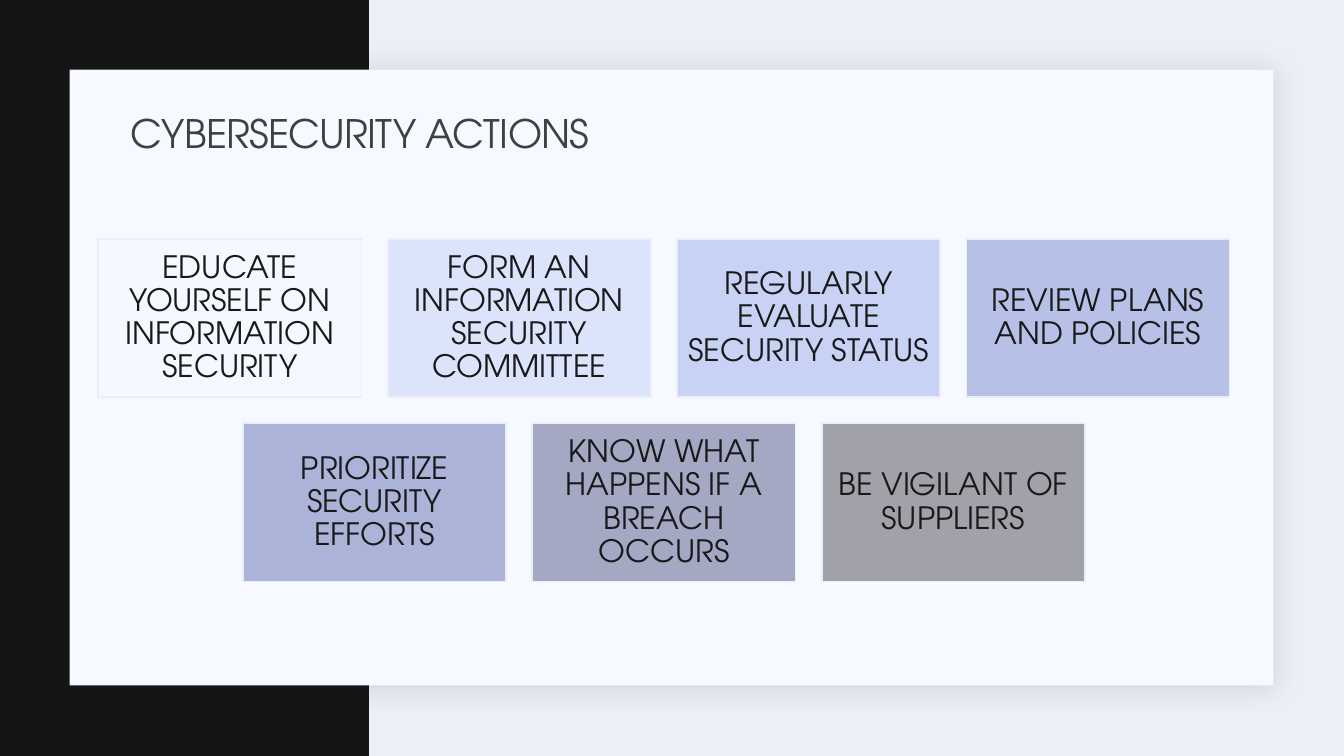
import pptx
import pptx.dml.color
import pptx.enum.shapes
import pptx.enum.text
import pptx.oxml
import pptx.oxml.ns
import pptx.util
from pptx.util import Inches

FONT = "TeX Gyre Adventor"
CARD_WIDTH, CARD_HEIGHT, CARD_GAP = 2.61, 1.57, 0.26
CARD_ROWS = [
    [
        ("EDUCATE YOURSELF ON INFORMATION SECURITY", "F5F8FF"),
        ("FORM AN INFORMATION SECURITY COMMITTEE", "DCE4FC"),
        ("REGULARLY EVALUATE SECURITY STATUS", "C7D2F4"),
        ("REVIEW PLANS AND POLICIES", "B7C1E8"),
    ],
    [
        ("PRIORITIZE SECURITY EFFORTS", "ABB3D8"),
        ("KNOW WHAT HAPPENS IF A BREACH OCCURS", "A4A8C3"),
        ("BE VIGILANT OF SUPPLIERS", "A1A2A9"),
    ],
]


def color(value):
    return pptx.dml.color.RGBColor.from_string(value)


def add_rectangle(page, box, fill, line=None):
    shape = page.shapes.add_shape(
        pptx.enum.shapes.MSO_SHAPE.RECTANGLE, *map(Inches, box))
    shape.shadow.inherit = False
    shape.fill.solid()
    shape.fill.fore_color.rgb = color(fill)
    if line:
        shape.line.color.rgb = color(line)
        shape.line.width = pptx.util.Pt(1.25)
    else:
        shape.line.fill.background()
    return shape


def add_soft_shadow(shape):
    effects = shape._element.spPr.find(pptx.oxml.ns.qn("a:effectLst"))
    effects.append(pptx.oxml.parse_xml(
        f'<a:outerShdw {pptx.oxml.ns.nsdecls("a")} blurRad="{pptx.util.Pt(20)}" '
        f'dist="{pptx.util.Pt(2)}" dir="{45 * 60000}" algn="tl" rotWithShape="0">'
        '<a:srgbClr val="1F2125"><a:alpha val="15000"/></a:srgbClr></a:outerShdw>'))


def set_text(shape, text, size, fill, align="LEFT", inset=0.1, tracking=0):
    """Write one vertically centred paragraph; tracking is in points."""
    frame = shape.text_frame
    frame.word_wrap = True
    frame.vertical_anchor = pptx.enum.text.MSO_ANCHOR.MIDDLE
    frame.margin_left = frame.margin_right = Inches(inset)
    frame.margin_top = frame.margin_bottom = Inches(min(inset, 0.09))
    para = frame.paragraphs[0]
    para.alignment = pptx.enum.text.PP_ALIGN[align]
    para.line_spacing = 0.9
    span = para.add_run()
    span.text = text
    span.font.name = FONT
    span.font.size = pptx.util.Pt(size)
    span.font.color.rgb = color(fill)
    if tracking:
        span._r.get_or_add_rPr().set("spc", str(round(tracking * 100)))


def add_backdrop(page, box):
    """Fill the page, with a dark band on its left and a raised panel."""
    left, top, width, height = box
    page.background.fill.solid()
    page.background.fill.fore_color.rgb = color("EDEFF7")
    add_rectangle(page, (left, top, 3.66, height), "141514")
    margin = 0.69
    panel = add_rectangle(
        page, (left + margin, top + margin, width - 1.39, height - 1.39), "F6F9FF")
    add_soft_shadow(panel)


def add_title(page, box):
    title = page.shapes.add_textbox(*map(Inches, box))
    set_text(title, "CYBERSECURITY ACTIONS", 28, "404040", tracking=-0.5)


def add_cards(page, box):
    """Stack the rows of cards, each row centred in the box."""
    left, top, width, _ = box
    for row_index, row in enumerate(CARD_ROWS):
        row_width = len(row) * (CARD_WIDTH + CARD_GAP) - CARD_GAP
        row_left = left + (width - row_width) / 2
        card_top = top + row_index * (CARD_HEIGHT + CARD_GAP)
        for index, (text, fill) in enumerate(row):
            card_left = row_left + index * (CARD_WIDTH + CARD_GAP)
            card = add_rectangle(
                page, (card_left, card_top, CARD_WIDTH, CARD_HEIGHT), fill, "ECEEF7")
            set_text(card, text, 22, "191919", align="CENTER", inset=0.09)


def main():
    deck = pptx.Presentation()
    deck.slide_width, deck.slide_height = Inches(13.33), Inches(7.5)
    page = deck.slides.add_slide(deck.slide_layouts[6])
    add_backdrop(page, (0, 0, 13.33, 7.5))
    add_title(page, (1.2, 1.03, 11, 0.64))
    add_cards(page, (0.97, 2.37, 11.23, 3.4))
    deck.save("out.pptx")


if __name__ == "__main__":
    main()
